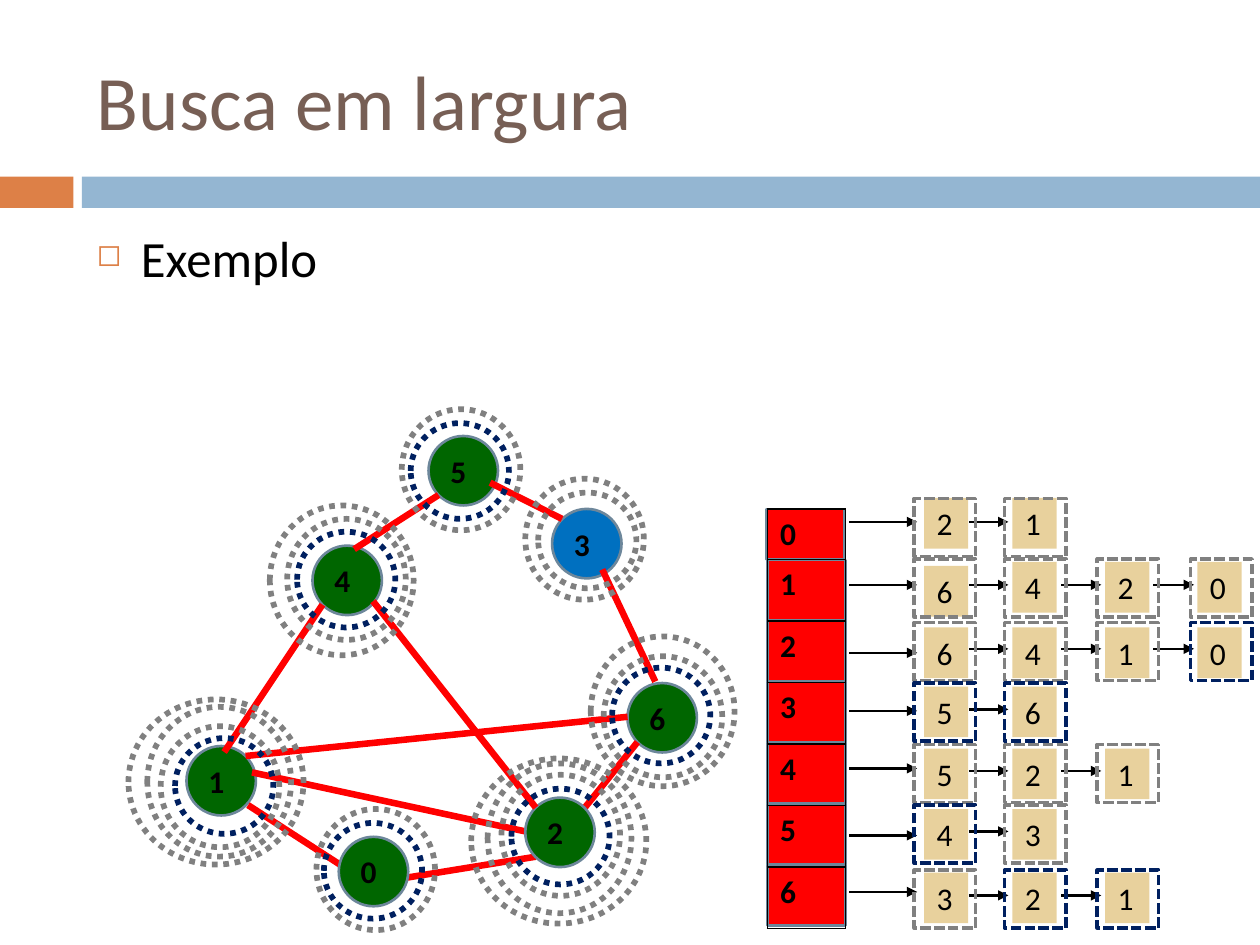
import pptx
import pptx.dml.color
import pptx.enum.dml
import pptx.enum.shapes
import pptx.enum.text
import pptx.oxml
import pptx.oxml.ns
import pptx.util

Cm = pptx.util.Cm
Pt = pptx.util.Pt
RGB = pptx.dml.color.RGBColor
DASH = pptx.enum.dml.MSO_LINE
KIND = pptx.enum.shapes.MSO_SHAPE

BLACK = RGB(0, 0, 0)
RED = RGB(0xFF, 0, 0)
GREEN = RGB(0, 0x66, 0)
BLUE = RGB(0, 0x70, 0xC0)
NAVY = RGB(0, 0x20, 0x60)
GRAY = RGB(0x80, 0x80, 0x80)
SLATE = RGB(0x6D, 0x87, 0x9B)
SAND = RGB(0xE8, 0xD1, 0x9D)
BROWN = RGB(0x77, 0x5F, 0x55)
ORANGE = RGB(0xDD, 0x80, 0x47)
SKY = RGB(0x94, 0xB6, 0xD2)

# name, left, top, fill, first ring colour, ring corners from small to large
BACK_NODES = [
    ("1", 3.76, 15.04, GREEN, NAVY,
     [(3.53, 14.88), (3.24, 14.64), (2.97, 14.25), (2.59, 14.1)]),
    ("3", 11.13, 10.26, BLUE, GRAY, [(10.85, 9.93), (10.59, 9.65)]),
    ("4", 6.3, 11, GREEN, NAVY, [(5.99, 10.72), (5.79, 10.46), (5.44, 10.19)]),
    ("5", 8.64, 8.79, GREEN, NAVY, [(8.28, 8.53), (8.1, 8.25)]),
    ("6", 12.65, 13.77, GREEN, NAVY,
     [(12.34, 13.46), (12.17, 13.23), (11.91, 12.83)]),
]
FRONT_NODES = [
    ("2", 10.59, 16.08, GREEN, NAVY,
     [(10.31, 15.9), (10.11, 15.62), (9.83, 15.39), (9.5, 15.29)]),
    ("0", 6.83, 16.87, GREEN, NAVY, [(6.53, 16.59), (6.38, 16.31)]),
]
RING_SIZES = [(1.98, 1.93), (2.39, 2.44), (2.9, 3.02), (3.53, 3.33)]
BACK_EDGES = [
    (8.15, 17.7, 10.8, 17.27), (5, 16.23, 7.04, 17.55),
    (4.52, 15.16, 6.5, 12.19), (5.08, 15.57, 10.59, 16.76),
    (11.79, 16.28, 12.85, 14.96), (4.95, 15.24, 12.65, 14.45),
]
FRONT_EDGES = [
    (7.14, 11.07, 8.84, 9.98), (7.52, 12.12, 10.8, 16.28),
    (9.88, 9.73, 11.33, 10.46), (13.21, 13.74, 12.14, 11.48),
]
# neighbours, cell top, frame top, first arrow, next arrows, navy columns
LISTS = [
    ("21", 10.04, 10.05, 10.52, 10.52, ()),
    ("6420", 11.33, 11.27, 11.79, 11.79, ()),
    ("6410", 12.65, 12.55, 13.16, 13.08, (3,)),
    ("56", 13.84, 13.77, 14.33, 14.3, (0, 1)),
    ("521", 15.09, 15.01, 15.49, 15.54, ()),
    ("43", 16.31, 16.23, 16.84, 16.76, (0,)),
    ("321", 17.59, 17.54, 17.98, 18.05, (1, 2)),
]
CELL_X = [18.63, 20.41, 22.28, 24.14]
FRAME_X = [18.43, 20.25, 22.12, 24]
ARROW_X = [(17.12, 18.49), (19.53, 20.33), (21.39, 22.2), (23.25, 24.07)]


def add_run(para, text, size, color, bold=False):
    run = para.add_run()
    run.text = text
    font = run.font
    font.name, font.size, font.bold = "Calibri", Pt(size), bold
    font.color.rgb = color


def add_form(slide, kind, box, fill=None, line=None, width=1.5, dash=None):
    form = slide.shapes.add_shape(kind, *map(Cm, box))
    form.shadow.inherit = False
    if fill is None:
        form.fill.background()
    else:
        form.fill.solid()
        form.fill.fore_color.rgb = fill
    if line is None:
        form.line.fill.background()
    else:
        form.line.color.rgb = line
        form.line.width = Pt(width)
        if dash is not None:
            form.line.dash_style = dash
    return form


def add_line(slide, ends, color, width, arrow=False):
    line = slide.shapes.add_connector(
        pptx.enum.shapes.MSO_CONNECTOR.STRAIGHT, *map(Cm, ends))
    line.line.color.rgb = color
    line.line.width = Pt(width)
    props = line._element.spPr
    props.append(pptx.oxml.parse_xml(
        f'<a:effectLst {pptx.oxml.ns.nsdecls("a")}/>'))
    if arrow:
        line.line._get_or_add_ln().append(pptx.oxml.parse_xml(
            f'<a:tailEnd {pptx.oxml.ns.nsdecls("a")} type="triangle"/>'))


def add_text(slide, box):
    frame = slide.shapes.add_textbox(*map(Cm, box)).text_frame
    frame.word_wrap = True
    return frame.paragraphs[0]


def add_head(slide):
    add_form(slide, KIND.RECTANGLE, (0, 3.56, 1.48, 0.63), ORANGE)
    add_form(slide, KIND.RECTANGLE, (1.65, 3.56, 23.75, 0.63), SKY)
    title = slide.shapes.title
    title.left, title.top = Cm(1.7), Cm(0.64)
    title.width, title.height = Cm(22.66), Cm(2.74)
    frame = title.text_frame
    frame.vertical_anchor = pptx.enum.text.MSO_ANCHOR.MIDDLE
    para = frame.paragraphs[0]
    para.alignment = pptx.enum.text.PP_ALIGN.LEFT
    add_run(para, "Busca em largura", 44, BROWN)


def add_bullet(slide):
    para = add_text(slide, (1.7, 4.45, 22.66, 12.5))
    props = para._p.get_or_add_pPr()
    props.set("marL", str(Cm(0.89)))
    props.set("indent", str(-Cm(0.89)))
    space = pptx.oxml.ns.nsdecls("a")
    for tag in (f'<a:buClr {space}><a:srgbClr val="{ORANGE}"/></a:buClr>',
                f'<a:buSzPct {space} val="60000"/>',
                f'<a:buChar {space} char="◻"/>'):
        props.append(pptx.oxml.parse_xml(tag))
    add_run(para, "Exemplo", 29, BLACK)


def add_index(slide):
    """Red boxes with the table of vertex numbers over them."""
    add_form(slide, KIND.RECTANGLE, (15.45, 10.26, 1.57, 1.02), RED, SLATE)
    for i in range(6):
        add_form(slide, KIND.RECTANGLE,
                 (15.47, 11.29 + 1.23 * i, 1.57, 1.22), RED, SLATE)
    table = slide.shapes.add_table(
        7, 1, Cm(15.47), Cm(10.26), Cm(1.57), Cm(8.41)).table
    table.first_row = table.horz_banding = False
    for i, row in enumerate(table.rows):
        row.height = Cm(1.24 if i else 0.94)
        cell = row.cells[0]
        props = cell._tc.get_or_add_tcPr()
        for side in "LRTB":
            props.append(pptx.oxml.parse_xml(
                f'<a:ln{side} {pptx.oxml.ns.nsdecls("a")} w="{Pt(1)}">'
                f'<a:solidFill><a:srgbClr val="{BLACK}"/></a:solidFill>'
                f'</a:ln{side}>'))
        cell.fill.background()
        add_run(cell.text_frame.paragraphs[0], str(i), 18, BLACK, True)


def add_node(slide, name, left, top, fill):
    add_form(slide, KIND.OVAL, (left, top, 1.4, 1.4), fill, SLATE)
    para = add_text(slide, (left + 0.19, top + 0.19, 1.4, 1.02))
    add_run(para, name, 18, BLACK, True)


def add_cell(slide, name, left, top):
    form = add_form(slide, KIND.RECTANGLE, (left, top, 0.89, 1.02), SAND)
    form.text_frame.vertical_anchor = pptx.enum.text.MSO_ANCHOR.TOP
    para = form.text_frame.paragraphs[0]
    para.alignment = pptx.enum.text.PP_ALIGN.LEFT
    add_run(para, name, 18, BLACK)


def add_list(slide, names, top, frame, first, later, marks):
    for i, name in enumerate(names):
        start, end = ARROW_X[i]
        y = later if i else first
        add_line(slide, (start, y, end, y), BLACK, 1.5, arrow=True)
        # the second row starts a little lower
        drop = 0.08 if names == "6420" and i == 0 else 0
        add_cell(slide, name, CELL_X[i], top + drop)
    for i in range(len(names)):
        add_form(slide, KIND.RECTANGLE, (FRAME_X[i], frame, 1.24, 1.17),
                 line=NAVY if i in marks else GRAY, width=2,
                 dash=DASH.SQUARE_DOT)


def add_rings(slide, color, spots):
    for i, (spot, size) in enumerate(zip(spots, RING_SIZES)):
        add_form(slide, KIND.OVAL, spot + size, line=GRAY if i else color,
                 width=3.25, dash=DASH.ROUND_DOT)


def main():
    deck = pptx.Presentation()
    deck.slide_width, deck.slide_height = Cm(25.4), Cm(19.05)
    slide = deck.slides.add_slide(deck.slide_layouts[5])
    add_head(slide)
    add_bullet(slide)
    add_index(slide)
    for nodes, edges in ((BACK_NODES, BACK_EDGES), (FRONT_NODES, FRONT_EDGES)):
        for node in nodes:
            add_node(slide, *node[:4])
        for ends in edges:
            add_line(slide, ends, RED, 3.75)
    for row in LISTS:
        add_list(slide, *row)
    for node in BACK_NODES + FRONT_NODES:
        add_rings(slide, *node[4:])
    deck.save("out.pptx")


if __name__ == "__main__":
    main()
